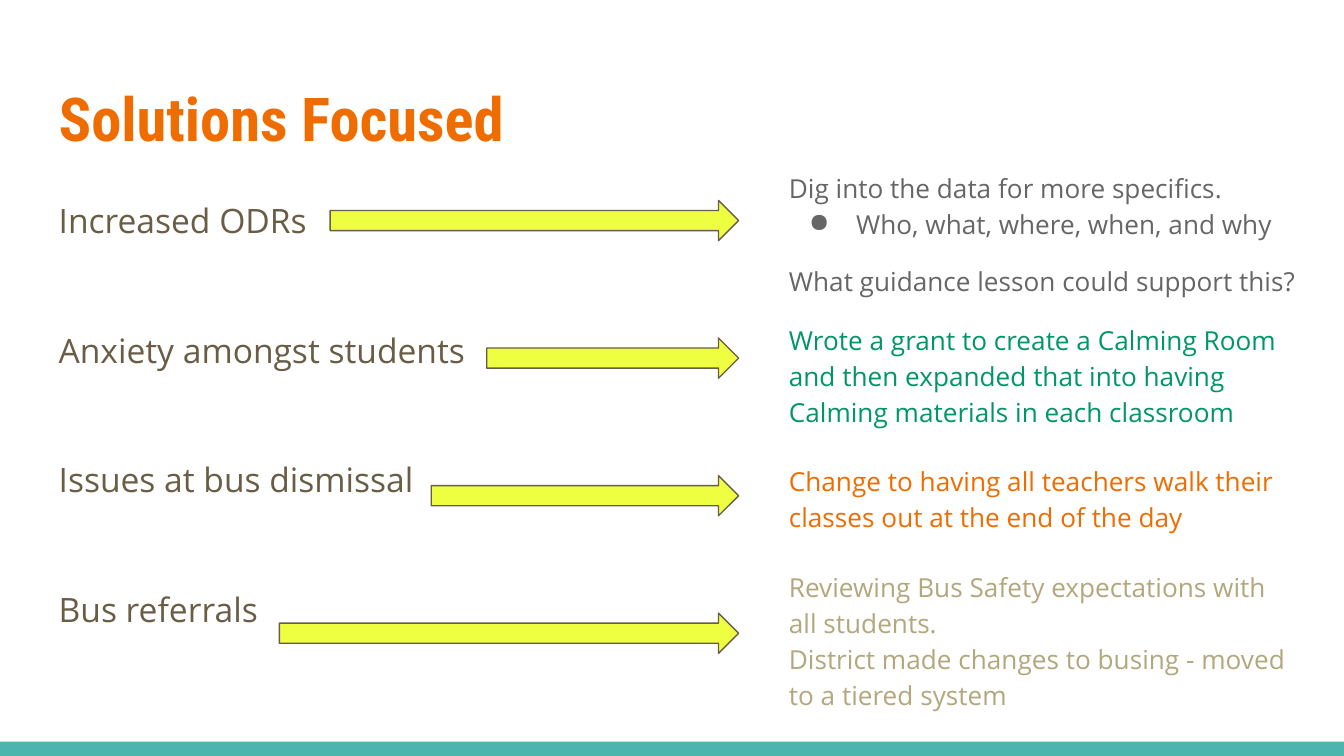
from lxml import etree
from pptx import Presentation
from pptx.dml.color import RGBColor
from pptx.enum.shapes import MSO_SHAPE
from pptx.enum.text import MSO_ANCHOR
from pptx.oxml.ns import qn
from pptx.util import Cm, Pt

RECT, ARROW = MSO_SHAPE.RECTANGLE, MSO_SHAPE.RIGHT_ARROW
TOP, MIDDLE = MSO_ANCHOR.TOP, MSO_ANCHOR.MIDDLE

COLORS = {
    "orange": "EF6C00", "brown": "695D46", "gray": "666666", "green": "009668",
    "tan": "B3A77D", "yellow": "EEFF41", "teal": "4DB6AC",
}
TITLE = "Solutions Focused"
# problem, left end of its arrow (cm)
PROBLEMS = [
    ("Increased ODRs", 6.24),
    ("Anxiety amongst students", 9.2),
    ("Issues at bus dismissal", 8.15),
    ("Bus referrals", 5.28),
]
# top (cm), height (cm), color, paragraphs
SOLUTIONS = [
    (2.92, 2.87, "gray", ["Dig into the data for more specifics.",
                          "Who, what, where, when, and why",
                          "What guidance lesson could support this?"]),
    (5.79, 2.49, "green", ["Wrote a grant to create a Calming Room and then expanded "
                           "that into having Calming materials in each classroom"]),
    (8.46, 1.8, "orange", ["Change to having all teachers walk their classes out "
                           "at the end of the day"]),
    (10.46, 3.18, "tan", ["Reviewing Bus Safety expectations with all students.",
                          "District made changes to busing - moved to a tiered system"]),
]
SLIDE_W, SLIDE_H = 25.4, 14.29
LEFT, SOLUTION_LEFT = 0.86, 14.66
ARROW_TOP, ARROW_STEP, ARROW_TIP, ARROW_H = 3.79, 2.6, 13.96, 0.76
BAND_H = 0.27


def rgb(name):
    return RGBColor.from_string(COLORS[name])


def add_text(slide, box, lines, font, size, color, spacing=1.0, gap=0, anchor=TOP):
    """Add a text box with one paragraph per line, gap points apart."""
    tf = slide.shapes.add_textbox(*map(Cm, box)).text_frame
    tf.word_wrap = True
    tf.vertical_anchor = anchor
    tf.margin_left = tf.margin_right = tf.margin_top = tf.margin_bottom = Cm(0.25)
    for i, line in enumerate(lines):
        p = tf.add_paragraph() if i else tf.paragraphs[0]
        p.text = line
        p.line_spacing = spacing
        p.space_before = Pt(gap if i else 0)
        p.font.name, p.font.size, p.font.color.rgb = font, Pt(size), rgb(color)
    return tf.paragraphs


def add_bullet(p):
    pPr = p._p.get_or_add_pPr()
    pPr.set("marL", str(Cm(1.27)))
    pPr.set("indent", str(Cm(-0.89)))
    bullet = etree.Element(qn("a:buChar"), char="●")
    pPr.find(qn("a:spcBef")).addnext(bullet)


def add_shape(slide, kind, box, fill, line=None):
    sp = slide.shapes.add_shape(kind, *map(Cm, box))
    sp.shadow.inherit = False
    sp.fill.solid()
    sp.fill.fore_color.rgb = rgb(fill)
    if line:
        sp.line.color.rgb = rgb(line)
        sp.line.width = Pt(0.75)
    else:
        sp.line.fill.background()


def main():
    prs = Presentation()
    prs.slide_width, prs.slide_height = Cm(SLIDE_W), Cm(SLIDE_H)
    slide = prs.slides.add_slide(prs.slide_layouts[6])

    add_shape(slide, RECT, (0, SLIDE_H - BAND_H, SLIDE_W, BAND_H), "teal")
    title = add_text(slide, (LEFT, 1.24, 23.67, 1.96), [TITLE],
                     "Roboto Condensed", 32.4, "orange", anchor=MIDDLE)
    title[0].font.bold = True

    add_text(slide, (LEFT, 3.5, 8.71, 9.17), [name for name, _ in PROBLEMS],
             "Open Sans", 18, "brown", spacing=1.05, gap=46.7)
    for i, (_, left) in enumerate(PROBLEMS):
        box = (left, ARROW_TOP + i * ARROW_STEP, ARROW_TIP - left, ARROW_H)
        add_shape(slide, ARROW, box, "yellow", "brown")

    for i, (top, height, color, lines) in enumerate(SOLUTIONS):
        paragraphs = add_text(slide, (SOLUTION_LEFT, top, 10.1, height), lines,
                              "Open Sans", 14, color, spacing=1.15)
        if i == 0:
            add_bullet(paragraphs[1])
            paragraphs[2].space_before = Pt(11)

    prs.save("out.pptx")


if __name__ == "__main__":
    main()
